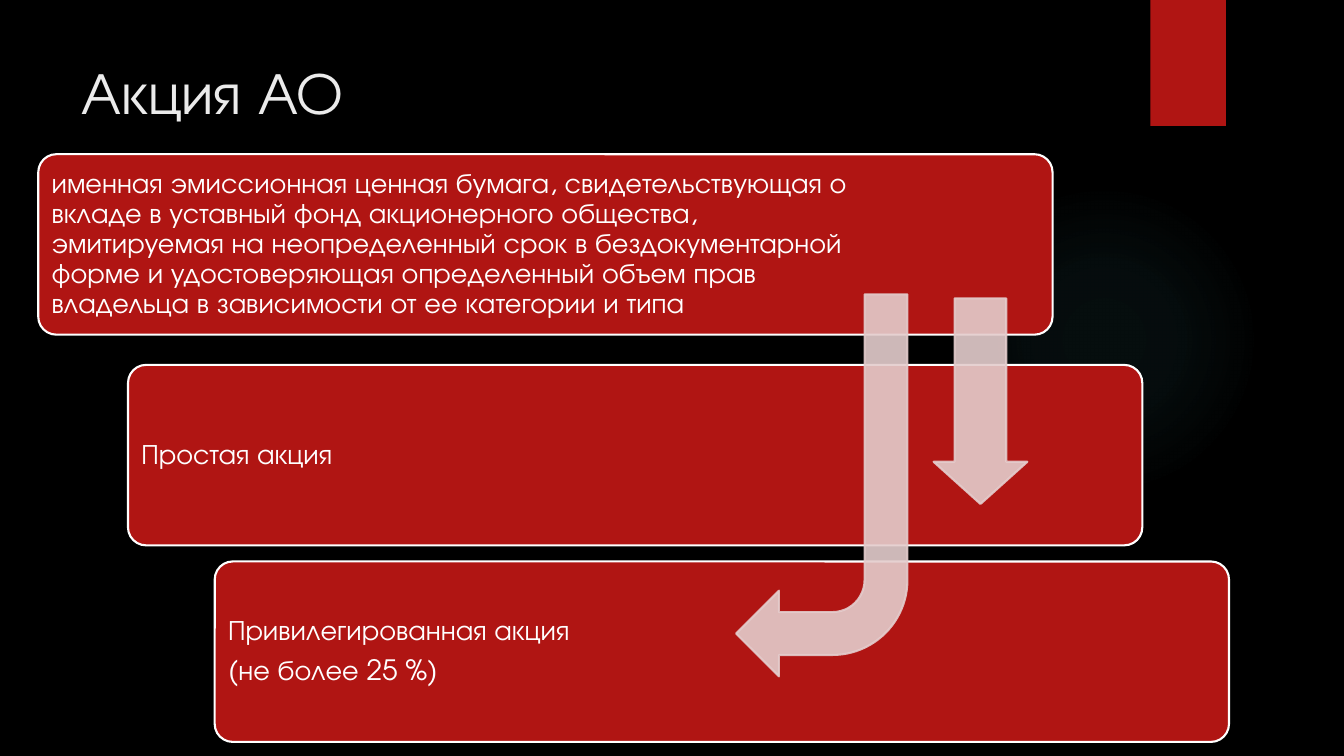
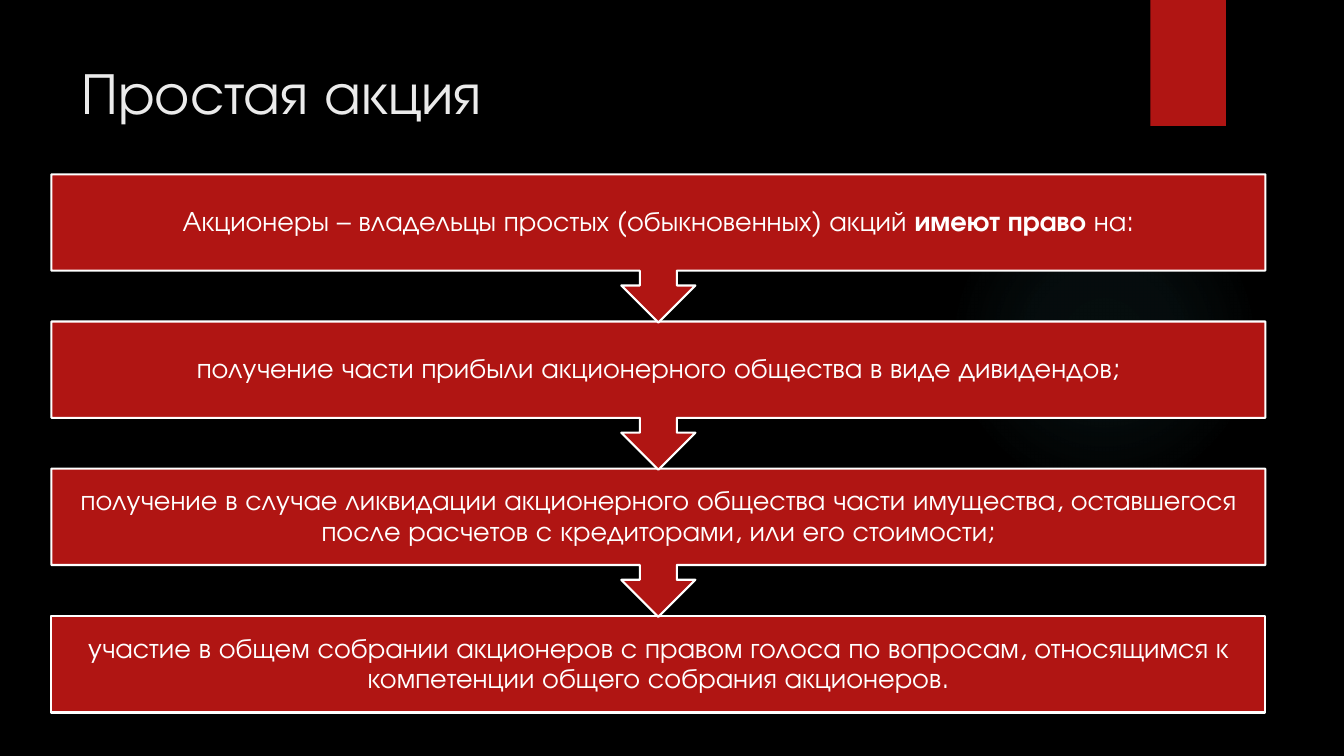
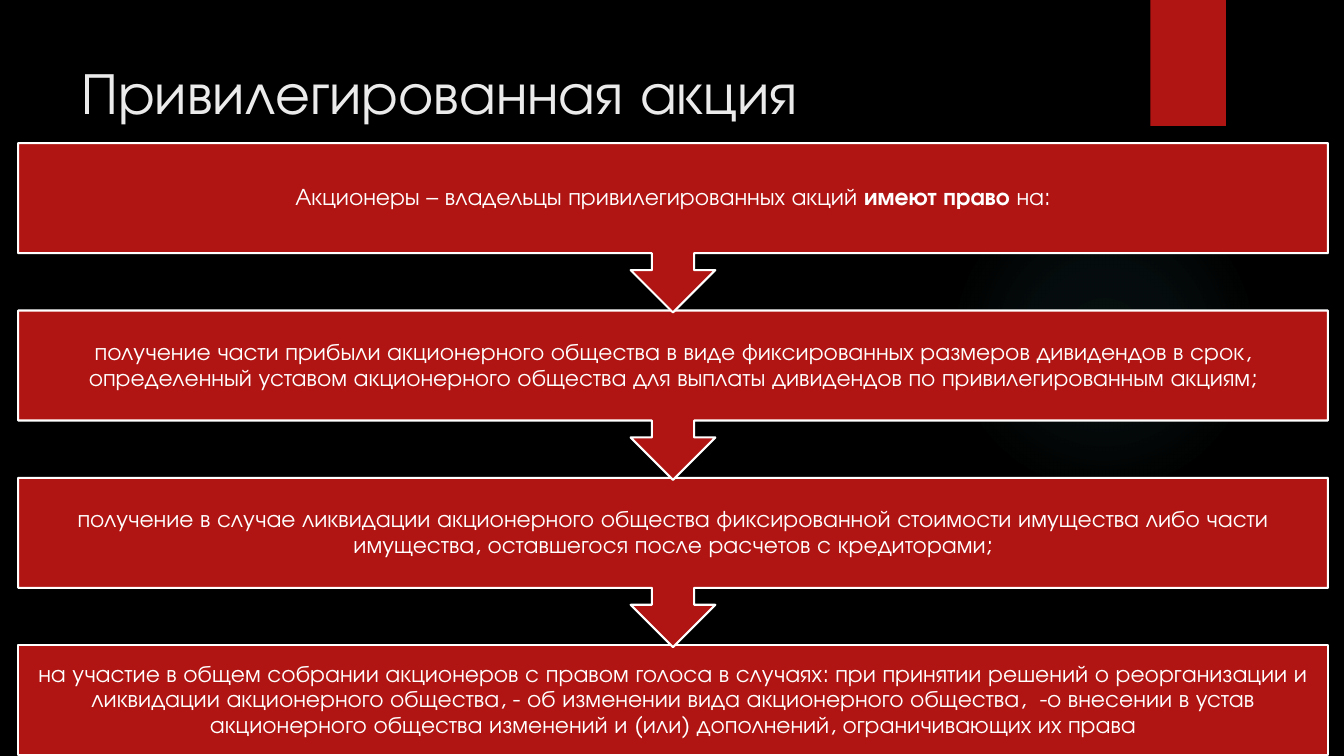
"""Build three slides on joint-stock company shares: overview, common and preferred."""
import lxml.etree
import pptx
import pptx.dml.color
import pptx.enum.shapes
import pptx.enum.text
import pptx.oxml
import pptx.oxml.ns
import pptx.util

Inches = pptx.util.Inches
Pt = pptx.util.Pt
SHAPE = pptx.enum.shapes.MSO_SHAPE
ALIGN = pptx.enum.text.PP_ALIGN
ANCHOR = pptx.enum.text.MSO_ANCHOR

FONT = "TeX Gyre Adventor"
BLACK, RED, WHITE = "000000", "B01513", "FFFFFF"
TITLE_COLOR, ARROW_COLOR, GLOW_COLOR = "EBEBEB", "E4CCCC", "50B9C1"
ARROW_OPACITY = 90
GLOW_STOPS = [(0, 7), (36, 6), (69, 0)]


def paint(fill, color):
    """Give a shape, line, font or background fill one solid colour."""
    fill.solid()
    fill.fore_color.rgb = pptx.dml.color.RGBColor.from_string(color)


def write_text(shape, paragraphs, size, color, align, line_spacing=1.0):
    """Write paragraphs given as lists of runs, every second run bold."""
    frame = shape.text_frame
    frame.word_wrap = True
    for index, runs in enumerate(paragraphs):
        paragraph = frame.add_paragraph() if index else frame.paragraphs[0]
        paragraph.alignment = align
        paragraph.line_spacing = line_spacing
        paragraph.space_after = Pt(round(size * 0.35))
        for position, text in enumerate(runs):
            run = paragraph.add_run()
            run.text = text
            run.font.name = FONT
            run.font.size = Pt(size)
            run.font.bold = position % 2 == 1
            paint(run.font.fill, color)


presentation = pptx.Presentation()
presentation.slide_width = Inches(13.33)
presentation.slide_height = Inches(7.5)
paint(presentation.slide_master.background.fill, BLACK)

share_panels = [
    (0.38, 1.53, [[
        "именная эмиссионная ценная бумага, свидетельствующая о вкладе в уставный фонд "
        "акционерного общества, эмитируемая на неопределенный срок в бездокументарной форме "
        "и удостоверяющая определенный объем прав владельца в зависимости от ее категории и типа"
    ]]),
    (1.27, 3.62, [["Простая акция"]]),
    (2.13, 5.57, [["Привилегированная акция"], ["(не более 25 %)"]]),
]
common_rights = [
    ["Акционеры – владельцы простых (обыкновенных) акций ", "имеют право ", "на:"],
    ["получение части прибыли акционерного общества в виде дивидендов;"],
    ["получение в случае ликвидации акционерного общества части имущества, оставшегося "
     "после расчетов с кредиторами, или его стоимости;"],
    ["участие в общем собрании акционеров с правом голоса по вопросам, относящимся "
     "к компетенции общего собрания акционеров."],
]
preferred_rights = [
    ["Акционеры – владельцы привилегированных акций ", "имеют право ", "на:"],
    ["получение части прибыли акционерного общества в виде фиксированных размеров дивидендов "
     "в срок, определенный уставом акционерного общества для выплаты дивидендов "
     "по привилегированным акциям;"],
    ["получение в случае ликвидации акционерного общества фиксированной стоимости имущества "
     "либо части имущества, оставшегося после расчетов с кредиторами;"],
    ["на участие в общем собрании акционеров с правом голоса в случаях: при принятии решений "
     "о реорганизации и ликвидации акционерного общества, - об изменении вида акционерного "
     "общества,  -о внесении в устав акционерного общества изменений и (или) дополнений, "
     "ограничивающих их права"],
]

overview = [
    (SHAPE.ROUNDED_RECTANGLE, (left, top, 10.06, 1.79), paragraphs)
    for left, top, paragraphs in share_panels
]
chains = []
for rights, left, top, width, step, callout_height, box_height in [
    (common_rights, 0.51, 1.73, 12.04, 1.46, 1.47, 0.96),
    (preferred_rights, 0.18, 1.42, 12.99, 1.66, 1.68, 1.09),
]:
    chain = []
    for index, runs in enumerate(rights):
        last = index == len(rights) - 1
        kind = SHAPE.RECTANGLE if last else SHAPE.DOWN_ARROW_CALLOUT
        height = box_height if last else callout_height
        chain.append((kind, (left, top + index * step, width, height), [runs]))
    chains.append(chain[::-1])

for title, title_height, panels, size, align, inset, right_inset in [
    ("Акция АО", 1.53, overview, 20, ALIGN.LEFT, 0.08, 1.92),
    ("Простая акция", 1.53, chains[0], 20, ALIGN.CENTER, 0.16, 0.16),
    ("Привилегированная акция", 1.12, chains[1], 17, ALIGN.CENTER, 0.13, 0.13),
]:
    slide = presentation.slides.add_slide(presentation.slide_layouts[6])

    glow = slide.shapes.add_shape(
        SHAPE.OVAL, Inches(9.41), Inches(1.83), Inches(3.08), Inches(3.08))
    glow.shadow.inherit = False
    glow.line.fill.background()
    glow.fill.background()
    stops = "".join(
        f'<a:gs pos="{position * 1000}"><a:srgbClr val="{GLOW_COLOR}">'
        f'<a:alpha val="{opacity * 1000}"/></a:srgbClr></a:gs>'
        for position, opacity in GLOW_STOPS)
    gradient = pptx.oxml.parse_xml(
        f'<a:gradFill {pptx.oxml.ns.nsdecls("a")}><a:gsLst>{stops}</a:gsLst>'
        '<a:path path="circle"><a:fillToRect l="50000" t="50000" r="50000" b="50000"/>'
        '</a:path></a:gradFill>')
    properties = glow._element.spPr
    properties.replace(properties.find(pptx.oxml.ns.qn("a:noFill")), gradient)

    ribbon = slide.shapes.add_shape(
        SHAPE.RECTANGLE, Inches(11.41), Inches(0), Inches(0.75), Inches(1.25))
    ribbon.shadow.inherit = False
    ribbon.line.fill.background()
    paint(ribbon.fill, RED)

    heading = slide.shapes.add_textbox(
        Inches(0.71), Inches(0.5), Inches(10.29), Inches(title_height))
    write_text(heading, [[title]], 42, TITLE_COLOR, ALIGN.LEFT)

    for kind, place, paragraphs in panels:
        panel = slide.shapes.add_shape(kind, *map(Inches, place))
        panel.shadow.inherit = False
        paint(panel.fill, RED)
        paint(panel.line.fill, WHITE)
        panel.line.width = Pt(1.5)
        if kind == SHAPE.ROUNDED_RECTANGLE:
            panel.adjustments[0] = 0.1
        frame = panel.text_frame
        frame.vertical_anchor = ANCHOR.MIDDLE
        frame.margin_left = frame.margin_top = frame.margin_bottom = Inches(inset)
        frame.margin_right = Inches(right_inset)
        write_text(panel, paragraphs, size, WHITE, align, 0.9)

for kind, place, rotation, adjustments in [
    (SHAPE.DOWN_ARROW, (9.26, 2.96, 0.93, 2.04), 0, [0.55, 0.45]),
    (SHAPE.BENT_ARROW, (7.3, 2.92, 1.7, 3.79), 180, []),
]:
    arrow = presentation.slides[0].shapes.add_shape(kind, *map(Inches, place))
    arrow.shadow.inherit = False
    arrow.rotation = rotation
    for index, value in enumerate(adjustments):
        arrow.adjustments[index] = value
    paint(arrow.fill, ARROW_COLOR)
    paint(arrow.line.fill, ARROW_COLOR)
    arrow.line.width = Pt(1.5)
    for color in arrow._element.spPr.iter(pptx.oxml.ns.qn("a:srgbClr")):
        alpha = lxml.etree.SubElement(color, pptx.oxml.ns.qn("a:alpha"))
        alpha.set("val", str(ARROW_OPACITY * 1000))

presentation.save("out.pptx")
